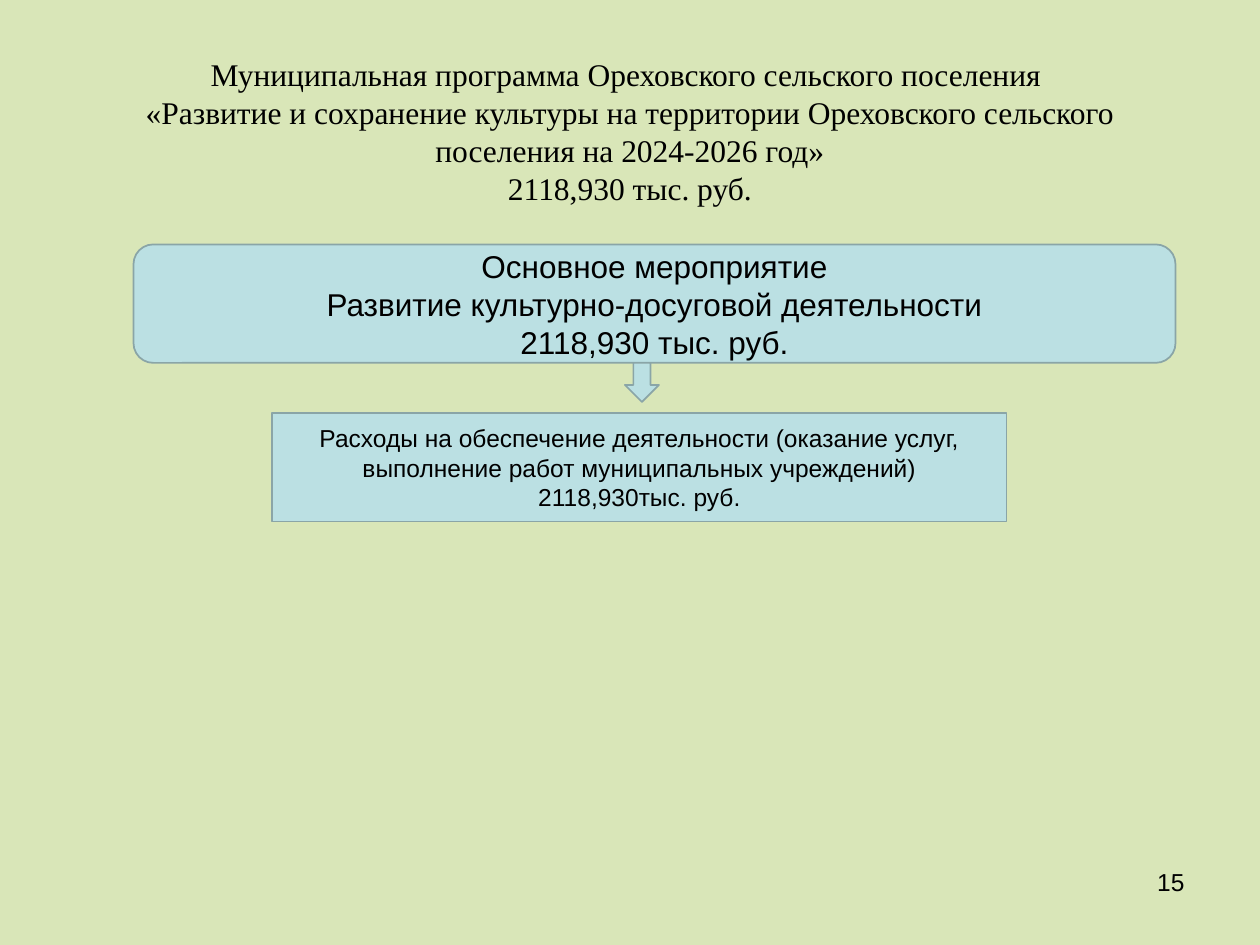
from dataclasses import dataclass

from pptx import Presentation
from pptx.dml.color import RGBColor
from pptx.enum.shapes import MSO_SHAPE as SHAPE
from pptx.enum.text import MSO_ANCHOR as ANCHOR, MSO_AUTO_SIZE as AUTO_SIZE, PP_ALIGN as ALIGN
from pptx.util import Inches, Pt

BACKGROUND = RGBColor(0xD9, 0xE6, 0xB8)
FILL = RGBColor(0xBB, 0xE0, 0xE3)
OUTLINE = RGBColor(0x8A, 0xA5, 0xA7)
BLACK = RGBColor(0, 0, 0)

TITLE = (
    "Муниципальная программа Ореховского сельского поселения \n"
    "«Развитие и сохранение культуры на территории Ореховского сельского "
    "поселения на 2024-2026 год»\n"
    "2118,930 тыс. руб."
)


@dataclass(frozen=True)
class Block:
    kind: SHAPE
    left: float
    top: float
    width: float
    height: float
    size: int = 18
    lines: tuple[str, ...] = ()


BLOCKS = (
    Block(SHAPE.ROUNDED_RECTANGLE, 1.06, 1.94, 8.27, 0.94, 18, (
        "Основное мероприятие",
        "Развитие культурно-досуговой деятельности",
        "2118,930 тыс. руб.",
    )),
    Block(SHAPE.DOWN_ARROW, 4.96, 2.88, 0.27, 0.31),
    Block(SHAPE.RECTANGLE, 2.16, 3.28, 5.83, 0.86, 14, (
        "Расходы на обеспечение деятельности (оказание услуг, "
        "выполнение работ муниципальных учреждений)",
        "2118,930тыс. руб.",
    )),
)


def write(tf, lines: tuple[str, ...], size: int, align: ALIGN,
          anchor: ANCHOR = ANCHOR.MIDDLE, font: str = "Arial") -> None:
    """Write one paragraph per line; a newline inside a line is a line break."""
    tf.word_wrap = True
    tf.auto_size = AUTO_SIZE.NONE
    tf.vertical_anchor = anchor
    for i, line in enumerate(lines):
        p = tf.add_paragraph() if i else tf.paragraphs[0]
        p.text = line
        p.alignment = align
        p.font.name = font
        p.font.size = Pt(size)
        p.font.color.rgb = BLACK


def add_block(slide, block: Block) -> None:
    sp = slide.shapes.add_shape(block.kind, Inches(block.left), Inches(block.top),
                                Inches(block.width), Inches(block.height))
    sp.shadow.inherit = False
    sp.fill.solid()
    sp.fill.fore_color.rgb = FILL
    sp.line.color.rgb = OUTLINE
    sp.line.width = Pt(1)
    if block.lines:
        write(sp.text_frame, block.lines, block.size, ALIGN.CENTER)


def main() -> None:
    prs = Presentation()
    prs.slide_width, prs.slide_height = Inches(10), Inches(7.5)
    slide = prs.slides.add_slide(prs.slide_layouts[5])
    slide.background.fill.solid()
    slide.background.fill.fore_color.rgb = BACKGROUND

    title = slide.shapes.title
    title.left, title.top = Inches(0.5), Inches(0.3)
    title.width, title.height = Inches(9), Inches(1.48)
    write(title.text_frame, (TITLE,), 18, ALIGN.CENTER, font="Times New Roman")

    number = slide.shapes.add_textbox(Inches(7.17), Inches(6.83), Inches(2.33), Inches(0.52))
    write(number.text_frame, ("15",), 14, ALIGN.RIGHT, ANCHOR.TOP)

    for block in BLOCKS:
        add_block(slide, block)

    prs.save("out.pptx")


if __name__ == "__main__":
    main()
